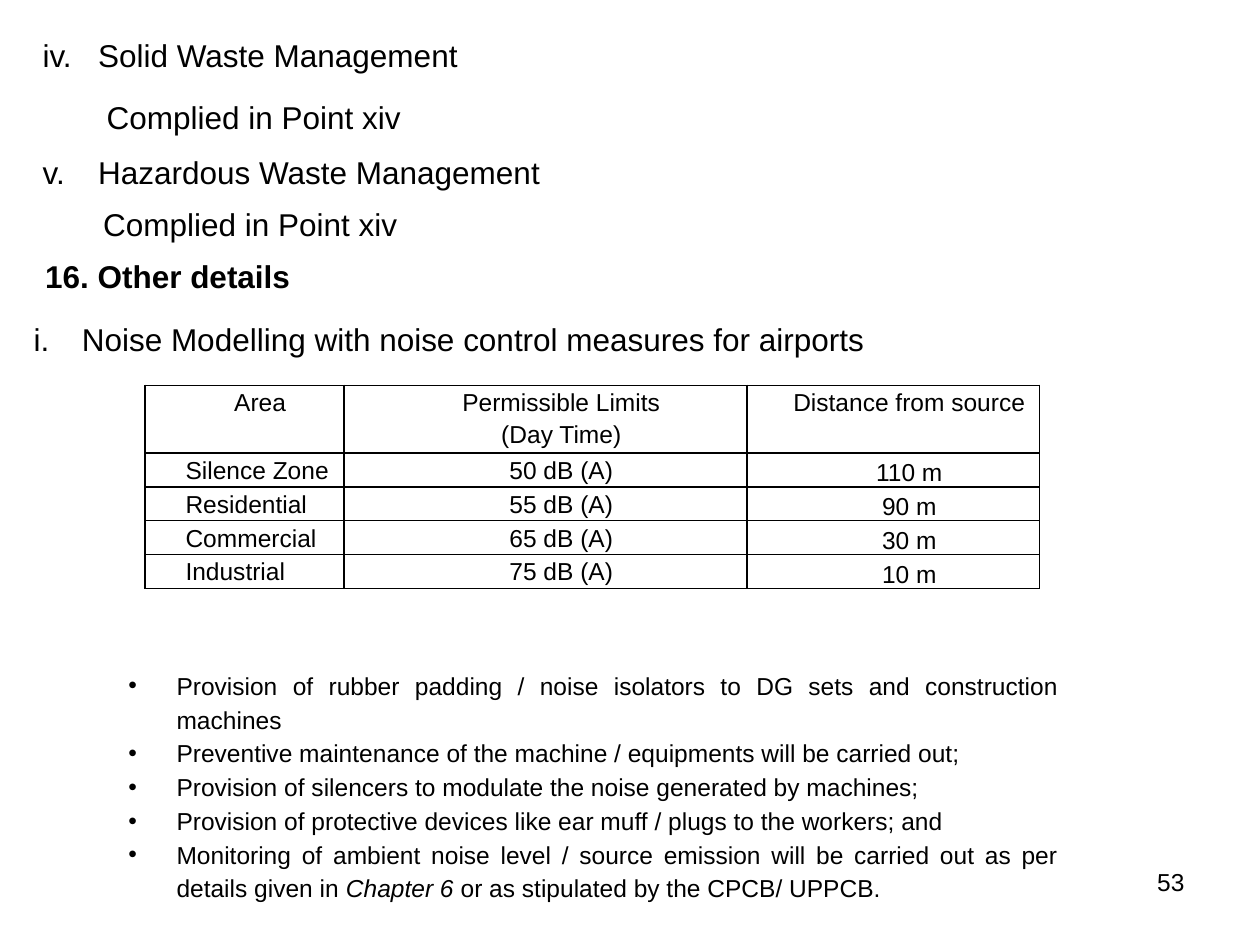
from pptx import Presentation
from pptx.dml.color import RGBColor
from pptx.enum.text import MSO_ANCHOR, MSO_AUTO_SIZE, PP_ALIGN
from pptx.oxml import parse_xml
from pptx.oxml.ns import nsdecls
from pptx.util import Cm, Pt

COLORS = {"text": "000000", "border": "000000", "background": "FFFFFF"}
FONT = "Arial"

NOISE_LIMITS = [
    (["Area"], ["Permissible Limits", "(Day Time)"], ["Distance from source"]),
    (["Silence Zone"], ["50 dB (A)"], ["110 m"]),
    (["Residential"], ["55 dB (A)"], ["90 m"]),
    (["Commercial"], ["65 dB (A)"], ["30 m"]),
    (["Industrial"], ["75 dB (A)"], ["10 m"]),
]

# Each measure is a list of (text, italic) runs
MEASURES = [
    [("Provision of rubber padding / noise isolators to DG sets and "
      "construction machines", False)],
    [("Preventive maintenance of the machine / equipments will be carried out;", False)],
    [("Provision of silencers to modulate the noise generated by machines;", False)],
    [("Provision of protective devices like ear muff / plugs to the workers; and", False)],
    [("Monitoring of ambient noise level / source emission will be carried out "
      "as per details given in ", False),
     ("Chapter 6", True),
     (" or as stipulated by the CPCB/ UPPCB.", False)],
]


def add_run(p, text, size, bold=False, italic=False):
    r = p.add_run()
    r.text = text
    r.font.name = FONT
    r.font.size = Pt(size)
    r.font.bold = bold
    r.font.italic = italic
    r.font.color.rgb = RGBColor.from_string(COLORS["text"])


def set_indent(p, left, first=0):
    pPr = p._p.get_or_add_pPr()
    pPr.set("marL", str(Cm(left)))
    pPr.set("indent", str(Cm(first)))
    return pPr


def set_marker(p, left, hanging, start=None):
    """Roman numeral from start, or a round bullet when start is None."""
    pPr = set_indent(p, left, -hanging)
    pPr.append(parse_xml(f'<a:buFont {nsdecls("a")} typeface="{FONT}"/>'))
    if start is None:
        marker = f'<a:buChar {nsdecls("a")} char="•"/>'
    else:
        marker = (f'<a:buAutoNum {nsdecls("a")} type="romanLcPeriod" '
                  f'startAt="{start}"/>')
    pPr.append(parse_xml(marker))


def add_box(s, left, top, width, height, wrap=True, grow=True):
    tf = s.shapes.add_textbox(Cm(left), Cm(top), Cm(width), Cm(height)).text_frame
    tf.word_wrap = wrap
    tf.auto_size = MSO_AUTO_SIZE.SHAPE_TO_FIT_TEXT if grow else MSO_AUTO_SIZE.NONE
    return tf


def add_line(s, text, left, top, width, wrap=True, bold=False):
    p = add_box(s, left, top, width, 1.02, wrap).paragraphs[0]
    add_run(p, text, 18, bold)
    return p


def set_borders(cell):
    tcPr = cell._tc.get_or_add_tcPr()
    for i, side in enumerate(("lnL", "lnR", "lnT", "lnB")):
        tcPr.insert(i, parse_xml(
            f'<a:{side} {nsdecls("a")} w="{Pt(1)}"><a:solidFill>'
            f'<a:srgbClr val="{COLORS["border"]}"/></a:solidFill></a:{side}>'))


def fill_cell(cell, lines, align, anchor):
    cell.margin_left = cell.margin_right = Cm(0.18)
    cell.margin_top = cell.margin_bottom = 0
    cell.vertical_anchor = anchor
    cell.fill.solid()
    cell.fill.fore_color.rgb = RGBColor.from_string(COLORS["background"])
    set_borders(cell)
    tf = cell.text_frame
    for i, line in enumerate(lines):
        p = tf.add_paragraph() if i else tf.paragraphs[0]
        p.alignment = align
        p.line_spacing = 1.15
        set_indent(p, 0.64)
        add_run(p, line, 14)


def add_limits_table(s):
    widths = (4.01, 8.13, 5.9)
    heights = [1.35] + [0.68] * (len(NOISE_LIMITS) - 1)
    table = s.shapes.add_table(len(heights), len(widths), Cm(2.92), Cm(7.77),
                               Cm(sum(widths)), Cm(sum(heights))).table
    table.first_row = table.horz_banding = False
    for column, width in zip(table.columns, widths):
        column.width = Cm(width)
    for i, (row, height) in enumerate(zip(NOISE_LIMITS, heights)):
        table.rows[i].height = Cm(height)
        for j, lines in enumerate(row):
            align = PP_ALIGN.JUSTIFY if i and j == 0 else PP_ALIGN.CENTER
            anchor = MSO_ANCHOR.BOTTOM if i and j == 2 else MSO_ANCHOR.TOP
            fill_cell(table.cell(i, j), lines, align, anchor)


def add_measures(s):
    tf = add_box(s, 2.34, 13.31, 19.25, 5)
    for i, runs in enumerate(MEASURES):
        p = tf.add_paragraph() if i else tf.paragraphs[0]
        p.alignment = PP_ALIGN.JUSTIFY
        p.line_spacing = 1.15
        set_marker(p, 0.97, 0.97)
        for text, italic in runs:
            add_run(p, text, 14, italic=italic)
    p.space_after = Pt(12)


def main():
    prs = Presentation()
    prs.slide_width, prs.slide_height = Cm(25.4), Cm(19.05)
    s = prs.slides.add_slide(prs.slide_layouts[6])

    # Waste management points
    p = add_line(s, "Solid Waste Management", 0, 0.61, 9.58, wrap=False)
    set_marker(p, 1.73, 1.12, start=4)
    add_line(s, "Complied in Point xiv", 1.9, 1.85, 23.5)
    p = add_line(s, "Hazardous Waste Management", 0, 2.97, 11.25, wrap=False)
    set_marker(p, 1.73, 1.12, start=5)
    add_line(s, "Complied in Point xiv", 1.83, 4.01, 23.5)

    # Other details
    add_line(s, "16. Other details", 0.66, 5.05, 5.51, wrap=False, bold=True)
    p = add_line(s, "Noise Modelling with noise control measures for airports",
                 0.28, 6.32, 23.37)
    set_marker(p, 1.12, 0.97, start=1)
    add_limits_table(s)
    add_measures(s)

    # Page number
    p = add_box(s, 18.21, 17.35, 5.92, 1.32, grow=False).paragraphs[0]
    p.alignment = PP_ALIGN.RIGHT
    add_run(p, "53", 14)

    prs.save("out.pptx")


if __name__ == "__main__":
    main()
